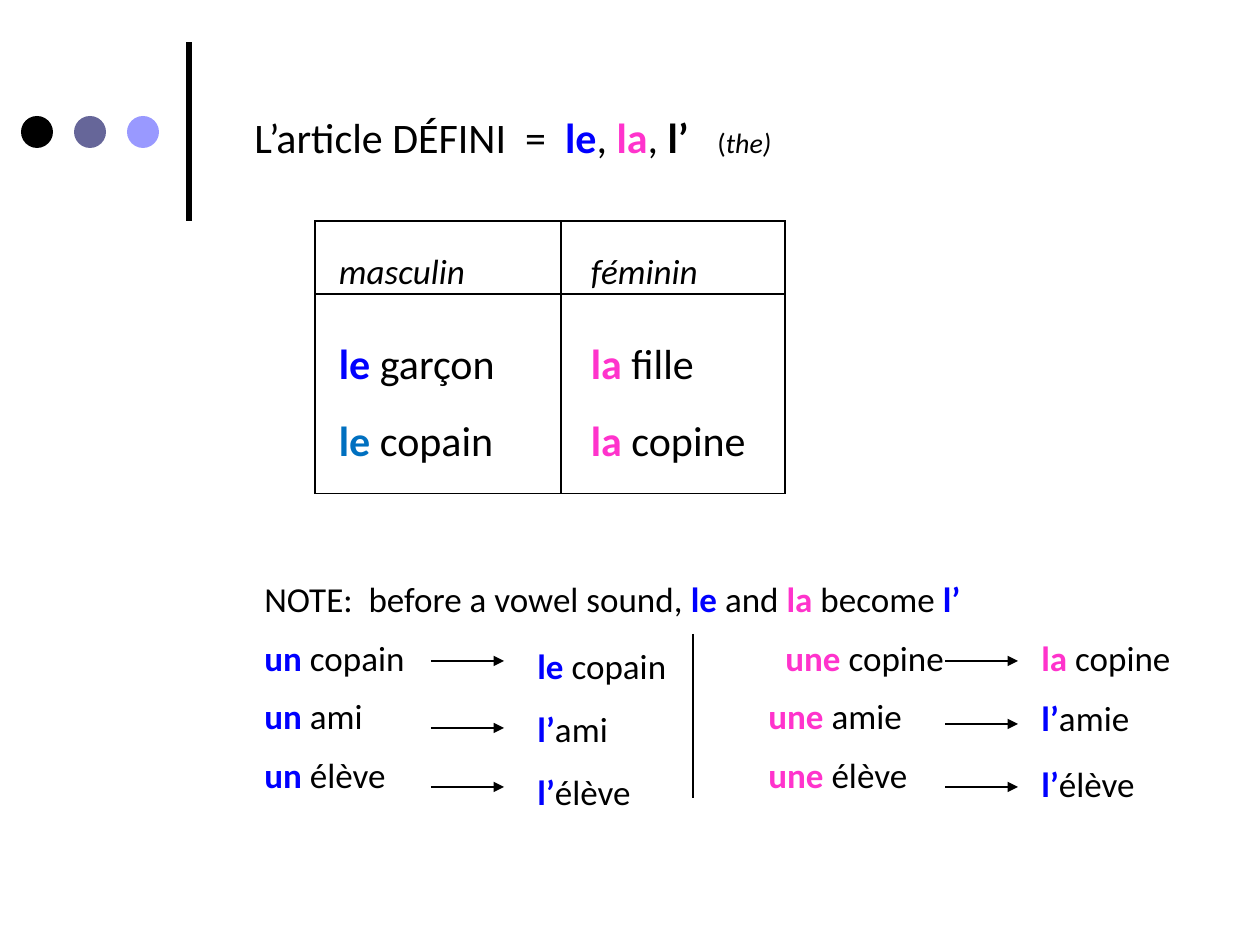
from dataclasses import dataclass

from lxml import etree
from pptx import Presentation
from pptx import util as u
from pptx.dml.color import RGBColor
from pptx.enum import shapes, text
from pptx.oxml import ns

SCALE = 914400 / 126
BLACK, BLUE, PINK, SKY = "000000", "0000FF", "FF33CC", "0070C0"


@dataclass(frozen=True)
class Span:
    """A stretch of text in one format."""
    words: str
    color: str = BLACK
    bold: bool = False
    italic: bool = False
    size: int | None = None


@dataclass(frozen=True)
class Line:
    """A paragraph and the px distance of its tab stop."""
    spans: tuple[Span, ...]
    tab: int | None = None


@dataclass(frozen=True)
class Example:
    """A noun in both genders, with the heights of its arrows and answers."""
    male: tuple[str, str]
    female: tuple[str, str]
    arrows: tuple[int, int]
    answers: tuple[int, int]


def px(length: int) -> u.Emu:
    """Turn px into EMU."""
    return u.Emu(round(length * SCALE))


def rgb(color: str) -> RGBColor:
    """Turn a hex string into a colour."""
    return RGBColor.from_string(color)


def strong(words: str, color: str) -> Span:
    """Make a bold coloured span."""
    return Span(words, color, bold=True)


def write(frame, lines: list[Line], *, size: int, before: float = 0, spacing: float = 1) -> None:
    """Fill a text frame with formatted paragraphs."""
    frame.word_wrap = True
    for index, line in enumerate(lines):
        para = frame.add_paragraph() if index else frame.paragraphs[0]
        para.line_spacing = spacing
        para.space_before = u.Pt(before if index else 0)
        if line.tab:
            stops = etree.SubElement(para._p.get_or_add_pPr(), ns.qn("a:tabLst"))
            etree.SubElement(stops, ns.qn("a:tab"), pos=str(px(line.tab)), algn="l")
        for span in line.spans:
            run = para.add_run()
            run.text = span.words
            font = run.font
            font.name, font.size = "Calibri", u.Pt(span.size or size)
            font.bold, font.italic = span.bold, span.italic
            font.color.rgb = rgb(span.color)


def add_text(page, left: int, top: int, width: int, height: int, lines: list[Line], **format) -> None:
    """Add a text box that grows with its text."""
    box = page.shapes.add_textbox(px(left), px(top), px(width), px(height))
    box.text_frame.auto_size = text.MSO_AUTO_SIZE.SHAPE_TO_FIT_TEXT
    write(box.text_frame, lines, **format)


def add_line(page, start: tuple[int, int], end: tuple[int, int], *, width: float = 0.75, arrow: bool = False) -> None:
    """Add a straight black line, with an arrowhead if asked."""
    line = page.shapes.add_connector(shapes.MSO_CONNECTOR.STRAIGHT, *map(px, start + end))
    line.line.color.rgb = rgb(BLACK)
    line.line.width = u.Pt(width)
    if arrow:
        etree.SubElement(line.line._get_or_add_ln(), ns.qn("a:tailEnd"), type="triangle")
    etree.SubElement(line._element.spPr, ns.qn("a:effectLst"))


def add_dot(page, left: int, color: str) -> None:
    """Add one of the decorative dots."""
    dot = page.shapes.add_shape(shapes.MSO_SHAPE.OVAL, px(left), px(116), px(32), px(32))
    dot.shadow.inherit = False
    dot.fill.solid()
    dot.fill.fore_color.rgb = rgb(color)
    dot.line.fill.background()


def add_borders(cell) -> None:
    """Draw thin black borders around a table cell."""
    props = cell._tc.get_or_add_tcPr()
    for index, side in enumerate(("lnL", "lnR", "lnT", "lnB")):
        border = etree.Element(ns.qn(f"a:{side}"), w=str(u.Pt(0.75)))
        fill = etree.SubElement(border, ns.qn("a:solidFill"))
        etree.SubElement(fill, ns.qn("a:srgbClr"), val=BLACK)
        props.insert(index, border)


def add_gender_table(page) -> None:
    """Add the table of masculine and feminine articles."""
    widths, heights = (246, 224), (73, 200)
    table = page.shapes.add_table(2, 2, px(315), px(221), px(sum(widths)), px(sum(heights))).table
    table.first_row = table.horz_banding = False
    for row, height in zip(table.rows, heights):
        row.height = px(height)
    genders = (
        ("masculin", 24, (("le ", BLUE, "garçon"), ("le ", SKY, "copain"))),
        ("féminin", 30, (("la ", PINK, "fille"), ("la ", PINK, "copine"))),
    )
    for index, (gender, indent, nouns) in enumerate(genders):
        table.columns[index].width = px(widths[index])
        header, body = table.cell(0, index), table.cell(1, index)
        for cell, bottom in ((header, 0), (body, 26)):
            cell.vertical_anchor = text.MSO_ANCHOR.BOTTOM
            cell.margin_left, cell.margin_bottom = px(indent), px(bottom)
            cell.margin_top = cell.margin_right = 0
            cell.fill.background()
            add_borders(cell)
        write(header.text_frame, [Line((Span(gender, italic=True),))], size=20)
        pairs = [Line((strong(article, color), Span(noun))) for article, color, noun in nouns]
        write(body.text_frame, pairs, size=24, spacing=1.5)


def add_vowel_note(page) -> None:
    """Add the vowel rule with its examples, arrows and answers."""
    examples = (
        Example(("le ", "copain"), ("la ", "copine"), (661, 661), (638, 630)),
        Example(("l’", "ami"), ("l’", "amie"), (728, 724), (701, 690)),
        Example(("l’", "élève"), ("l’", "élève"), (787, 787), (764, 756)),
    )
    lines = [Line((
        Span("NOTE:  before a vowel sound, "), strong("le ", BLUE), Span("and "),
        strong("la", PINK), Span(" become "), strong("l’", BLUE),
    ))]
    for index, example in enumerate(examples):
        lines.append(Line((
            strong("un ", BLUE), Span(example.male[1] + "\t"),
            strong("une ", PINK), Span(example.female[1]),
        ), tab=504 if index else 521))
    add_text(page, 252, 571, 955, 246, lines, size=20, before=9.6)
    add_line(page, (693, 634), (693, 798))
    for example in examples:
        sides = zip((431, 945), example.arrows, (525, 1029), example.answers, (example.male, example.female))
        for start, arrow_top, left, top, (article, noun) in sides:
            add_line(page, (start, arrow_top), (start + 73, arrow_top), arrow=True)
            color = PINK if article == "la " else BLUE
            add_text(page, left, top, 189, 55, [Line((strong(article, color), Span(noun)))], size=20)


def main() -> None:
    """Build the slide and save the deck."""
    deck = Presentation()
    deck.slide_width, deck.slide_height = px(1260), px(945)
    page = deck.slides.add_slide(deck.slide_layouts[6])
    add_line(page, (189, 221), (189, 42), width=3)
    for index, color in enumerate((BLACK, "666699", "9999FF")):
        add_dot(page, 21 + 53 * index, color)
    title = Line((
        Span("L’article DÉFINI  =  "), strong("le", BLUE), Span(", "), strong("la", PINK), Span(", "),
        strong("l’\t", BLACK), Span("(", size=16), Span("the)", italic=True, size=16),
    ), tab=463)
    add_text(page, 242, 105, 725, 63, [title], size=24)
    add_gender_table(page)
    add_vowel_note(page)
    deck.save("out.pptx")


if __name__ == "__main__":
    main()
